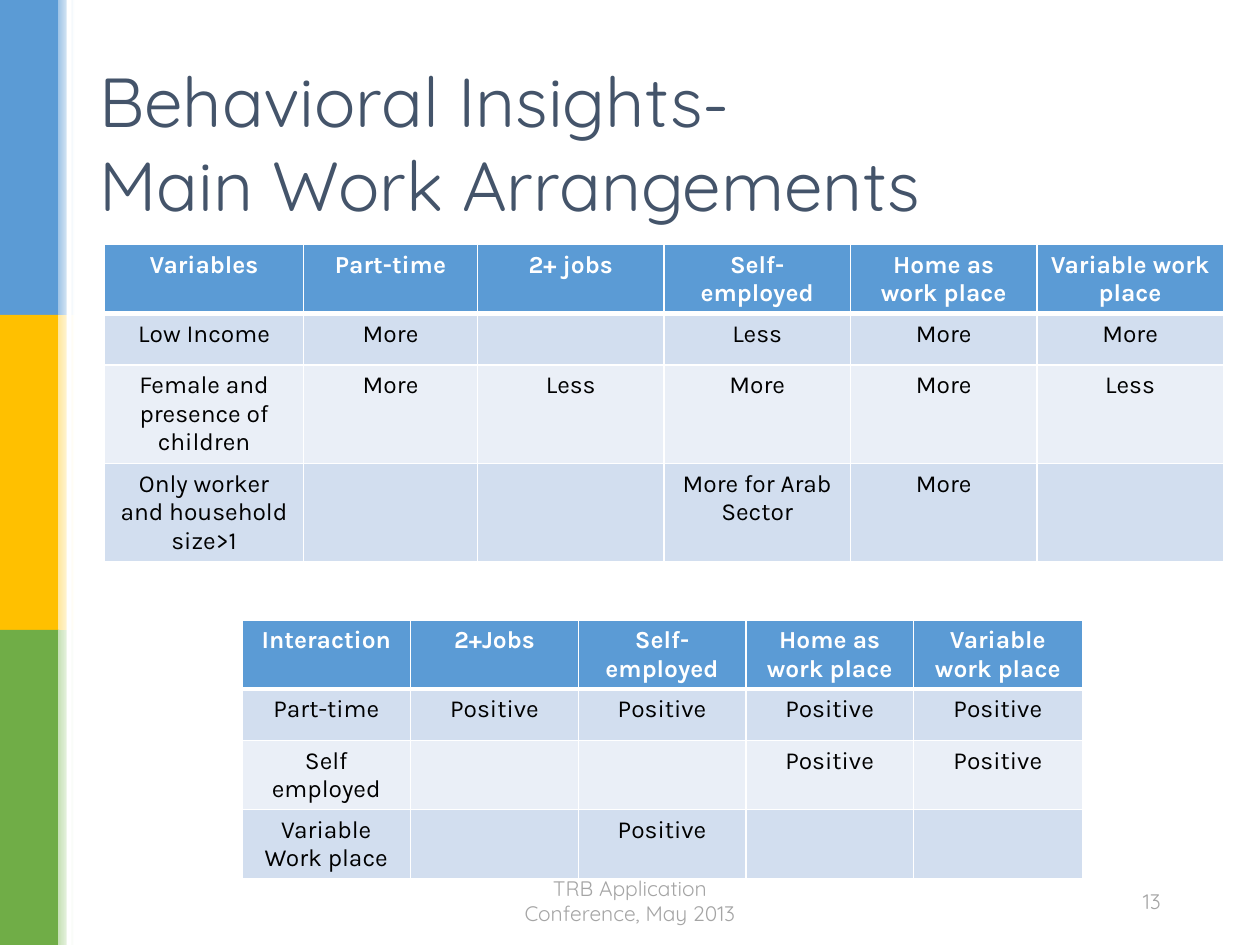
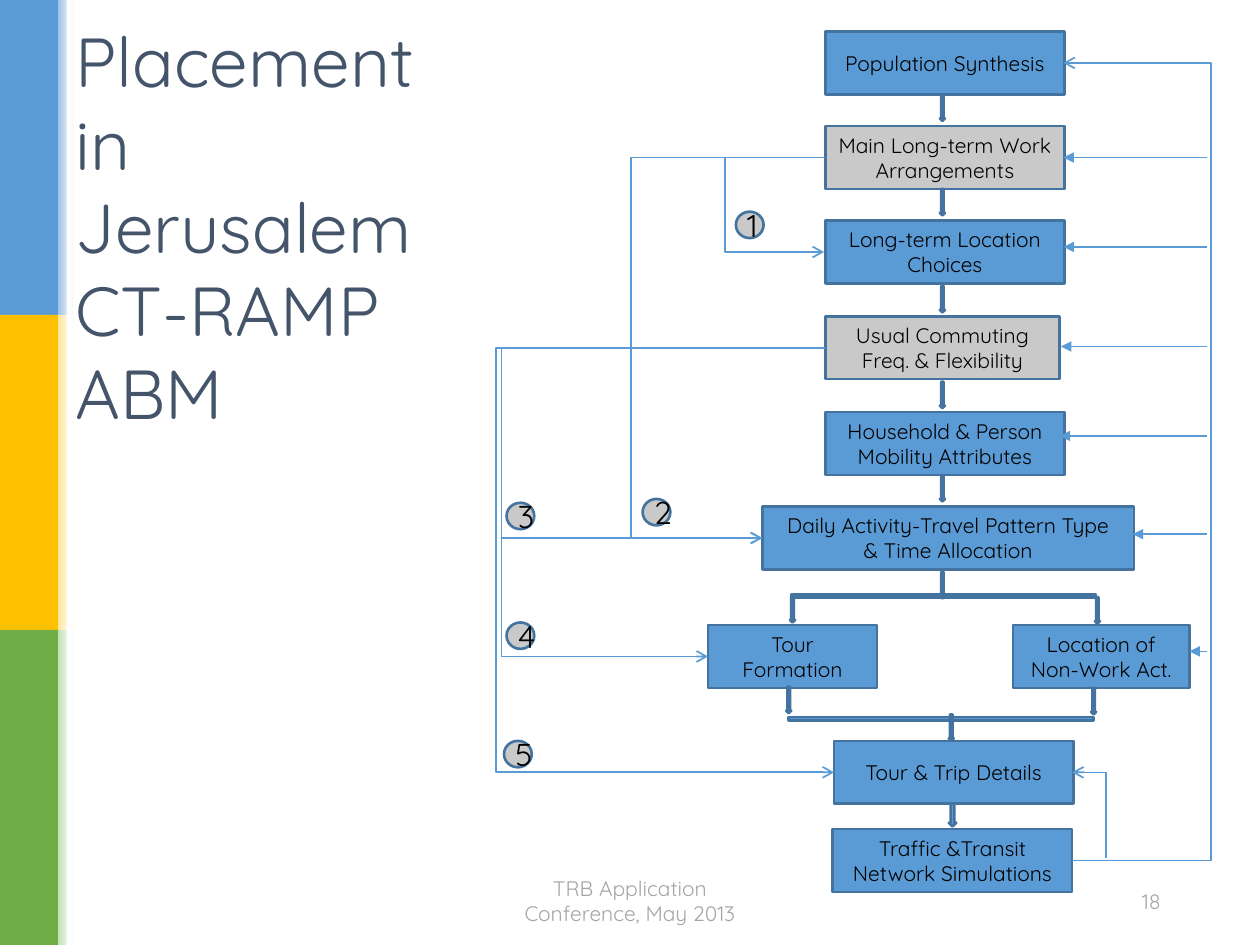
from dataclasses import dataclass
from typing import NamedTuple

from lxml.etree import SubElement
from pptx import Presentation
from pptx.dml.color import RGBColor
from pptx.enum.shapes import MSO_CONNECTOR as Conn, MSO_SHAPE as Geo
from pptx.enum.text import MSO_ANCHOR as Anchor, PP_ALIGN as Align
from pptx.oxml.ns import qn
from pptx.util import Emu, Pt

PX = 9144  # 100 px to the inch


@dataclass(frozen=True)
class Theme:
    blue: str = "5B9BD5"
    yellow: str = "FFC000"
    green: str = "70AD47"
    blue_tint: str = "9DC3E6"
    yellow_tint: str = "FFE699"
    green_tint: str = "C5E0B4"
    outline: str = "43739E"
    grey: str = "C9C9C9"
    title: str = "44546A"
    footer: str = "A5A5A5"
    white: str = "FFFFFF"
    black: str = "000000"
    row_dark: str = "D2DEEF"
    row_light: str = "EAEFF7"
    head_font: str = "Quicksand"
    table_font: str = "Karla"
    title_size: float = 39.6
    body_size: float = 12
    table_size: float = 14
    badge_size: float = 18


T = Theme()


class Box(NamedTuple):
    x: int
    y: int
    w: int
    h: int


class Step(NamedTuple):
    """A box of the model flow."""
    text: str
    box: Box
    fill: str = T.blue


class Arrow(NamedTuple):
    """A thin block arrow pointing down."""
    x: int
    y: int
    w: int = 4
    h: int = 21


class Bend(NamedTuple):
    """An elbow that runs sideways to via, then to the end point."""
    x1: int
    y1: int
    x2: int
    y2: int
    via: int


class Grid(NamedTuple):
    x: int
    y: int
    widths: list[int]
    rows: list[list[str]]


def rgb(code: str) -> RGBColor:
    return RGBColor.from_string(code)


def emu(*px: int) -> list[Emu]:
    return [Emu(v * PX) for v in px]


def write(tf, text: str, color: str, size: float, font: str = T.head_font,
          bold: bool = False, align: Align = Align.CENTER) -> None:
    p = tf.paragraphs[0]
    p.text = text
    p.alignment = align
    fmt = {"size": Pt(size), "name": font, "bold": bold}
    for target in [p.font, *(r.font for r in p.runs)]:
        for key, value in fmt.items():
            setattr(target, key, value)
        target.color.rgb = rgb(color)


def add_text(s, box: Box, text: str, color: str, size: float, align: Align) -> None:
    tf = s.shapes.add_textbox(*emu(*box)).text_frame
    for key, value in {"word_wrap": True, "vertical_anchor": Anchor.MIDDLE}.items():
        setattr(tf, key, value)
    write(tf, text, color, size, align=align)


def add_geo(s, geo: Geo, box: Box, fill: str, outlined: bool = True):
    sp = s.shapes.add_shape(geo, *emu(*box))
    sp.shadow.inherit = False
    sp.fill.solid()
    sp.fill.fore_color.rgb = rgb(fill)
    if outlined:
        sp.line.color.rgb = rgb(T.outline)
        sp.line.width = Pt(1.5)
    else:
        sp.line.fill.background()
    return sp


def add_label(s, geo: Geo, step: Step, size: float) -> None:
    tf = add_geo(s, geo, step.box, step.fill).text_frame
    tf.word_wrap = True
    tf.vertical_anchor = Anchor.MIDDLE
    write(tf, step.text, T.black, size)


def add_arrow_line(s, kind: Conn, ends: tuple, tip: str):
    c = s.shapes.add_connector(kind, *emu(*ends))
    c.line.color.rgb = rgb(T.blue)
    c.line.width = Pt(1)
    spPr = c._element.spPr
    SubElement(spPr.find(qn("a:ln")), qn("a:tailEnd"), type=tip)
    SubElement(spPr, qn("a:effectLst"))
    return c


def add_bend(s, b: Bend) -> None:
    c = add_arrow_line(s, Conn.ELBOW, b[:4], "arrow")
    geom = c._element.spPr.find(qn("a:prstGeom"))
    av = geom.find(qn("a:avLst"))
    if av is None:
        av = SubElement(geom, qn("a:avLst"))
    ratio = round((b.via - b.x1) / (b.x2 - b.x1) * 100000)
    SubElement(av, qn("a:gd"), name="adj1", fmla=f"val {ratio}")


def set_borders(cell, widths: dict[str, int]) -> None:
    tcPr = cell._tc.get_or_add_tcPr()
    for i, (side, width) in enumerate(widths.items()):
        ln = SubElement(tcPr, qn(f"a:ln{side}"), w=str(Pt(width)))
        fill = SubElement(ln, qn("a:solidFill"))
        SubElement(fill, qn("a:srgbClr"), val=T.white)
        tcPr.insert(i, ln)


def add_grid(s, g: Grid) -> None:
    row_h, bottom_gap = emu(41, 3)
    n = len(g.rows)
    frame = s.shapes.add_table(n, len(g.widths), *emu(g.x, g.y, sum(g.widths)),
                               n * row_h)
    tbl = frame.table
    for col, width in zip(tbl.columns, g.widths):
        col.width = Emu(width * PX)
    for i, row in enumerate(g.rows):
        tbl.rows[i].height = row_h
        head = i == 0
        fill = T.blue if head else T.row_dark if i % 2 else T.row_light
        for j, text in enumerate(row):
            cell = tbl.cell(i, j)
            cell.margin_bottom = bottom_gap
            cell.fill.solid()
            cell.fill.fore_color.rgb = rgb(fill)
            set_borders(cell, {"L": 1, "R": 1, "T": 3 if i == 1 else 1,
                               "B": 3 if head else 1})
            write(cell.text_frame, text, T.white if head else T.black,
                  T.table_size, T.table_font, head)


def new_slide(prs, title: str, title_box: Box):
    """Add a slide with the side bands and title."""
    s = prs.slides.add_slide(prs.slide_layouts[6])
    bands = [(T.blue, T.blue_tint), (T.yellow, T.yellow_tint), (T.green, T.green_tint)]
    for i, (color, tint) in enumerate(bands):
        add_geo(s, Geo.RECTANGLE, Box(0, i * 250, 47, 250), color, False)
        fade = add_geo(s, Geo.RECTANGLE, Box(46, i * 250, 13, 250), tint, False)
        fade.fill.gradient()
        fade.fill.gradient_angle = 0
        for stop, code in zip(fade.fill.gradient_stops, (tint, T.white)):
            stop.color.rgb = rgb(code)
    add_geo(s, Geo.RECTANGLE, Box(53, 0, 4, 750), T.white, False)
    add_text(s, title_box, title, T.title, T.title_size, Align.LEFT)
    return s


def add_footer(s, number: int) -> None:
    for box, text, align in [
            (Box(381, 695, 238, 40), "TRB Application Conference, May 2013", Align.CENTER),
            (Box(662, 695, 269, 40), str(number), Align.RIGHT)]:
        add_text(s, box, text, T.footer, T.body_size, align)


INTERACTIONS = Grid(192, 492, [134, 133, 133, 133, 134], [
    ["Interaction", "2+Jobs", "Self-employed", "Home as work place", "Variable work place"],
    ["Part-time"] + ["Positive"] * 4,
    ["Self employed", "", "", "Positive", "Positive"],
    ["Variable Work place", "", "Positive", "", ""],
])
VARIABLES = Grid(83, 194, [158, 138] + [148] * 4, [
    ["Variables", "Part-time", "2+ jobs", "Self-employed", "Home as work place",
     "Variable work place"],
    ["Low Income", "More", "", "Less", "More", "More"],
    ["Female and presence of children", "More", "Less", "More", "More", "Less"],
    ["Only worker and household size>1", "", "", "More for Arab Sector", "More", ""],
])

STEPS = [
    Step("Population Synthesis", Box(655, 25, 190, 50)),
    Step("Main Long-term Work Arrangements", Box(655, 100, 190, 50), T.grey),
    Step("Long-term Location Choices", Box(655, 175, 190, 50)),
    Step("Usual Commuting Freq. & Flexibility", Box(655, 251, 186, 50), T.grey),
    Step("Household & Person Mobility Attributes", Box(655, 327, 190, 50)),
    Step("Daily Activity-Travel Pattern Type\v& Time Allocation", Box(605, 402, 295, 50)),
    Step("Tour Formation", Box(562, 496, 134, 50)),
    Step("Location of Non-Work Act.", Box(804, 496, 140, 50)),
    Step("Tour & Trip Details", Box(662, 588, 190, 50)),
    Step("Traffic &Transit Network Simulations", Box(661, 658, 190, 50)),
]
SPLIT_BARS = [Box(628, 472, 242, 2), Box(626, 569, 242, 3)]
DOWN_ARROWS = [Arrow(746, y) for y in (75, 150, 227, 303, 377, 454)] + [
    Arrow(627, 473), Arrow(869, 474), Arrow(624, 545), Arrow(866, 546),
    Arrow(753, 567), Arrow(753, 638, 6, 18),
]
BENDS = [
    Bend(655, 125, 605, 427, 501),
    Bend(655, 125, 654, 200, 574),
    Bend(655, 276, 605, 427, 398),
    Bend(655, 276, 562, 521, 398),
    Bend(655, 276, 662, 613, 394),
    Bend(851, 683, 844, 50, 961),
    Bend(878, 681, 851, 613, 878),
]
BADGES = [(584, 168), (510, 396), (402, 399), (402, 494), (400, 588)]
FEEDBACK_X = 958
FEEDBACKS = [(844, 125), (844, 196), (842, 275), (841, 346), (899, 424), (944, 517)]


def build_insights(prs) -> None:
    s = new_slide(prs, "Behavioral Insights-\vMain Work Arrangements",
                  Box(69, 40, 862, 145))
    for grid in (INTERACTIONS, VARIABLES):
        add_grid(s, grid)
    add_footer(s, 13)


def build_placement(prs) -> None:
    s = new_slide(prs, "Placement in Jerusalem CT-RAMP ABM", Box(50, 0, 325, 358))
    for step in STEPS:
        add_label(s, Geo.RECTANGLE, step, T.body_size)
    for bar in SPLIT_BARS:
        add_geo(s, Geo.RECTANGLE, bar, T.blue)
    for arrow in DOWN_ARROWS:
        add_geo(s, Geo.DOWN_ARROW, Box(*arrow), T.blue)
    for bend in BENDS:
        add_bend(s, bend)
    for n, (x, y) in enumerate(BADGES, 1):
        add_label(s, Geo.OVAL, Step(str(n), Box(x, y, 22, 21), T.grey), T.badge_size)
    for x, y in FEEDBACKS:
        add_arrow_line(s, Conn.STRAIGHT, (FEEDBACK_X, y, x, y), "triangle")
    add_footer(s, 18)


def main() -> None:
    prs = Presentation()
    prs.slide_width, prs.slide_height = emu(1000, 750)
    build_insights(prs)
    build_placement(prs)
    prs.save("out.pptx")


if __name__ == "__main__":
    main()
